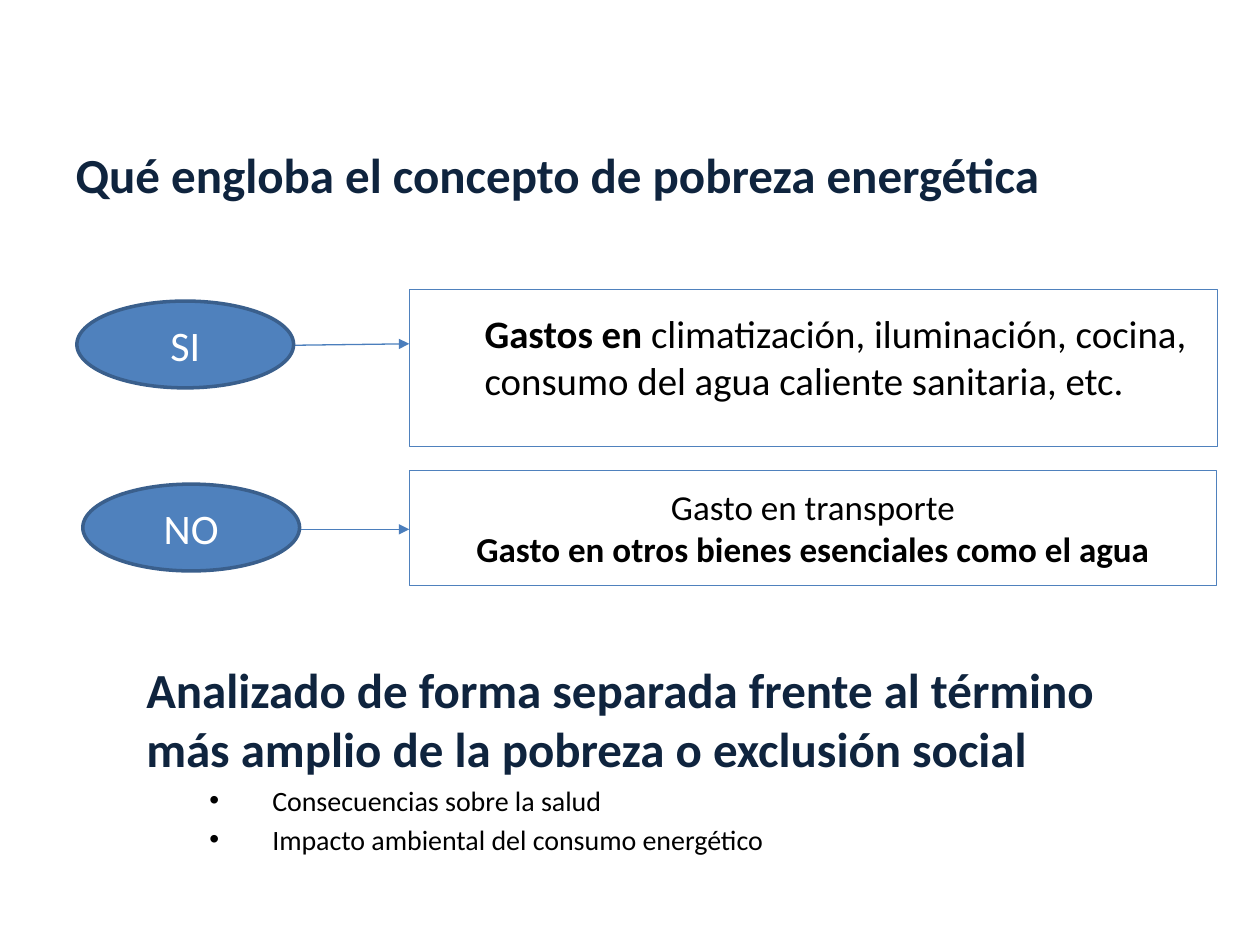
from lxml import etree
from pptx import Presentation
from pptx import util as u
from pptx.dml.color import RGBColor
from pptx.enum import shapes, text
from pptx.oxml.ns import qn

NAVY = RGBColor(0x0F, 0x24, 0x3E)
BLUE = RGBColor(0x4F, 0x81, 0xBD)
ARROW_BLUE = RGBColor(0x4B, 0x7E, 0xBC)
DARK_BLUE = RGBColor(0x3A, 0x5F, 0x8C)
BLACK = RGBColor(0, 0, 0)
WHITE = RGBColor(0xFF, 0xFF, 0xFF)

LEFT, CENTER = text.PP_ALIGN.LEFT, text.PP_ALIGN.CENTER
TOP, MIDDLE = text.MSO_ANCHOR.TOP, text.MSO_ANCHOR.MIDDLE
HEADING = {"size": u.Pt(28), "bold": True, "color": NAVY}


class SlideBuilder:
    """Holds the style and the current slide."""

    font = "Calibri"

    def __init__(self, deck):
        self.page = deck.slides.add_slide(deck.slide_layouts[5])

    def paragraph(self, frame, spans, align=LEFT, before=0, margin=0, indent=0, bullet=None):
        """Write (wording, format) spans into the next paragraph."""
        para = frame.paragraphs[0]
        if para.runs:
            para = frame.add_paragraph()
        para.alignment = align
        para.space_before = u.Pt(before)
        props = para._p.get_or_add_pPr()
        props.set("marL", str(u.Cm(margin)))
        props.set("indent", str(u.Cm(indent)))
        if bullet:
            etree.SubElement(props, qn("a:buFont")).set("typeface", "Arial")
            etree.SubElement(props, qn("a:buChar")).set("char", bullet)
        for wording, style in spans:
            span = para.add_run()
            span.text = wording
            for name, value in {"name": self.font, **style}.items():
                if name == "color":
                    span.font.color.rgb = value
                else:
                    setattr(span.font, name, value)

    def frame(self, box, anchor):
        frame = box.text_frame
        settings = {"word_wrap": True, "auto_size": text.MSO_AUTO_SIZE.NONE,
                    "vertical_anchor": anchor}
        for name, value in settings.items():
            setattr(frame, name, value)
        return frame

    def title(self, wording, place):
        box = self.page.shapes.title
        for name, value in zip(("left", "top", "width", "height"), place):
            setattr(box, name, u.Cm(value))
        self.paragraph(self.frame(box, MIDDLE), [(wording, HEADING)])

    def text_box(self, place):
        box = self.page.shapes.add_textbox(*map(u.Cm, place))
        return self.frame(box, TOP)

    def shape(self, kind, place, line, width, fill=None):
        box = self.page.shapes.add_shape(kind, *map(u.Cm, place))
        box.shadow.inherit = False
        if fill is None:
            box.fill.background()
        else:
            box.fill.solid()
            box.fill.fore_color.rgb = fill
        box.line.color.rgb = line
        box.line.width = u.Pt(width)
        return self.frame(box, MIDDLE)

    def oval(self, wording, left, top):
        frame = self.shape(shapes.MSO_SHAPE.OVAL, (left, top, 4.37, 1.75), DARK_BLUE, 2, BLUE)
        self.paragraph(frame, [(wording, {"size": u.Pt(24), "color": WHITE})], CENTER)

    def panel(self, top, height, width):
        return self.shape(shapes.MSO_SHAPE.RECTANGLE, (8.25, top, 16.28, height), BLUE, width)

    def arrow(self, start, end):
        line = self.page.shapes.add_connector(
            shapes.MSO_CONNECTOR.STRAIGHT, *map(u.Cm, start + end))
        line.line.color.rgb = ARROW_BLUE
        line.line.width = u.Pt(0.75)
        etree.SubElement(line.line._get_or_add_ln(), qn("a:tailEnd")).set("type", "triangle")
        etree.SubElement(line._element.spPr, qn("a:effectLst"))


def main():
    deck = Presentation()
    deck.slide_width, deck.slide_height = u.Cm(25.4), u.Cm(19.05)
    slide = SlideBuilder(deck)

    # Title
    slide.title("Qué engloba el concepto de pobreza energética", (1.27, 2.6, 22.86, 1.8))

    # Included expenses
    slide.arrow((5.92, 6.96), (8.25, 6.93))
    included = slide.panel(5.83, 3.17, 0.25)
    included.margin_bottom = u.Cm(0.57)
    body = {"size": u.Pt(22.2), "color": BLACK}
    slide.paragraph(included, [
        ("Gastos en ", {**body, "bold": True}),
        ("climatización, iluminación, cocina, consumo del agua caliente sanitaria, etc.", body),
    ], margin=1.27)
    slide.oval("SI", 1.55, 6.07)

    # Excluded expenses
    slide.arrow((5.97, 10.67), (8.25, 10.67))
    excluded = slide.panel(9.48, 2.32, 0.75)
    for wording, bold in (("Gasto en transporte", False),
                          ("Gasto en otros bienes esenciales como el agua", True)):
        style = {"size": u.Pt(20), "color": BLACK, "bold": bold}
        slide.paragraph(excluded, [(wording, style)], CENTER)
    slide.oval("NO", 1.67, 9.76)

    # Closing statement and bullets
    closing = slide.text_box((2.7, 13.18, 21.05, 5.05))
    slide.paragraph(closing, [(
        "Analizado de forma separada frente al término más amplio de la pobreza "
        "o exclusión social", HEADING)])
    for wording in ("Consecuencias sobre la salud", "Impacto ambiental del consumo energético"):
        slide.paragraph(closing, [(wording, {"size": u.Pt(16), "color": BLACK})],
                        before=3.2, margin=2.54, indent=-1.27, bullet="•")

    deck.save("out.pptx")


if __name__ == "__main__":
    main()
